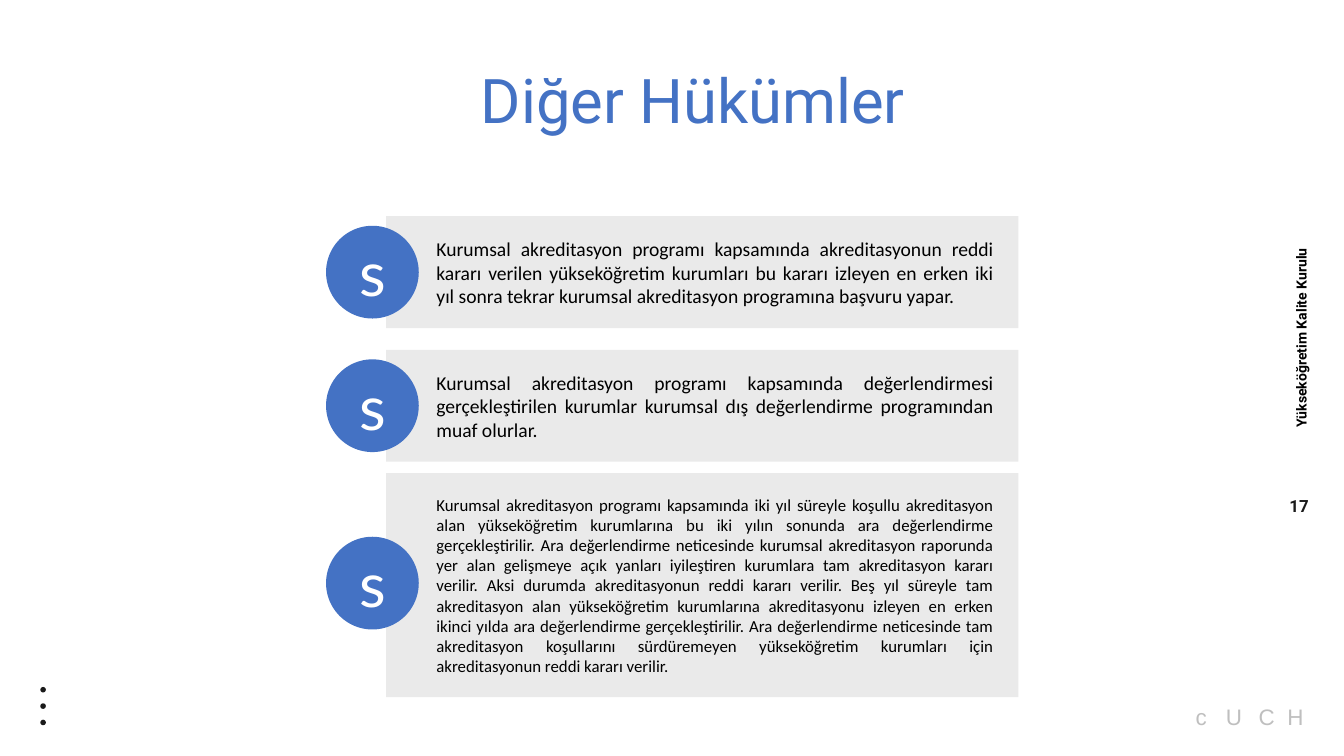
from dataclasses import dataclass

from lxml.etree import SubElement
from pptx import Presentation
from pptx.dml.color import RGBColor
from pptx.enum.shapes import MSO_SHAPE as Shape
from pptx.enum.text import MSO_ANCHOR as Anchor, PP_ALIGN as Align
from pptx.oxml.ns import qn
from pptx.util import Inches, Pt


@dataclass(frozen=True)
class Theme:
    """Colours, fonts and type sizes of the slide."""
    blue: str = "4472C4"
    ink: str = "1A1A1A"
    black: str = "000000"
    white: str = "FFFFFF"
    pale: str = "BFBFBF"
    heading: str = "Roboto"
    body: str = "Calibri"
    badge: str = "Lato"
    icon: str = "Arial"
    display_size: int = 88
    icon_size: int = 32
    body_size: int = 28
    small_size: int = 24
    label_size: int = 20
    panel_opacity: int = 9


def write_text(shape, text, *, size, font, color, bold=False, align=Align.LEFT,
               anchor=Anchor.MIDDLE, wrap=True, insets=(0.1, 0.05, 0.1, 0.05)):
    """Fill a shape with one formatted paragraph."""
    frame = shape.text_frame
    frame.word_wrap = wrap
    frame.vertical_anchor = anchor
    (frame.margin_left, frame.margin_top,
     frame.margin_right, frame.margin_bottom) = map(Inches, insets)
    paragraph = frame.paragraphs[0]
    paragraph.alignment = align
    run = paragraph.add_run()
    run.text = text
    run.font.size = Pt(size)
    run.font.name = font
    run.font.bold = bold
    run.font.color.rgb = RGBColor.from_string(color)


class SlideBuilder:
    """Draws the elements of one slide in one theme."""

    def __init__(self, slide, theme):
        """Keep the slide and its theme."""
        self.slide = slide
        self.theme = theme

    def text(self, box, text, rotation=0, **style):
        """Add a text box."""
        shape = self.slide.shapes.add_textbox(*map(Inches, box))
        shape.rotation = rotation
        write_text(shape, text, **style)

    def shape(self, kind, box, fill, opacity=100):
        """Add a preset shape with a plain fill and no line."""
        shape = self.slide.shapes.add_shape(kind, *map(Inches, box))
        shape.shadow.inherit = False
        shape.line.fill.background()
        shape.fill.solid()
        shape.fill.fore_color.rgb = RGBColor.from_string(fill)
        if opacity < 100:
            color = shape._element.spPr.find(".//" + qn("a:srgbClr"))
            SubElement(color, qn("a:alpha"), val=str(opacity * 1000))
        return shape

    def provision(self, top, height, badge_top, text, size):
        """Add a grey text panel with a round badge on its left edge."""
        theme = self.theme
        panel = self.shape(Shape.RECTANGLE, (7.66, top, 12.55, height),
                           theme.ink, theme.panel_opacity)
        write_text(panel, text, size=size, font=theme.body, color=theme.black,
                   align=Align.JUSTIFY, insets=(1, 0.4, 0.5, 0.4))
        badge = self.shape(Shape.OVAL, (6.47, badge_top, 1.84, 1.84), theme.blue)
        write_text(badge, "s", size=theme.display_size, font=theme.badge,
                   color=theme.white, align=Align.CENTER, insets=(0.1, 0, 0.1, 0))

    def side_furniture(self):
        """Add the side label, page number, dots and icon letters."""
        theme = self.theme
        self.text((23.9, 6.45, 3.83, 0.44), "Yükseköğretim Kalite Kurulu", rotation=270,
                  size=theme.label_size, font=theme.heading, color=theme.black,
                  bold=True, wrap=False)
        self.text((25.38, 9.71, 0.8, 0.64), "17", size=theme.small_size,
                  font=theme.heading, color=theme.ink, bold=True, align=Align.CENTER,
                  wrap=False, insets=(0.13, 0.07, 0.13, 0.07))
        for index in range(3):
            self.shape(Shape.OVAL, (0.8, 13.63 + index * 0.325, 0.11, 0.11), theme.ink)
        for letter, left in zip("cUCH", (23.51, 24.16, 24.81, 25.38)):
            self.text((left, 13.9, 0.65, 0.64), letter, size=theme.icon_size,
                      font=theme.icon, color=theme.pale, align=Align.CENTER, wrap=False)


def main():
    """Build and save the slide."""
    theme = Theme()
    presentation = Presentation()
    presentation.slide_width = Inches(26.67)
    presentation.slide_height = Inches(15)
    slide = presentation.slides.add_slide(presentation.slide_layouts[6])
    builder = SlideBuilder(slide, theme)
    builder.side_furniture()
    builder.text((3.9, 1.17, 19.7, 1.58), "Diğer Hükümler", size=theme.display_size,
                 font=theme.heading, color=theme.blue, align=Align.CENTER,
                 anchor=Anchor.TOP)
    provisions = (
        (4.29, 2.22, 4.48, theme.body_size,
         "Kurumsal akreditasyon programı kapsamında akreditasyonun reddi kararı verilen "
         "yükseköğretim kurumları bu kararı izleyen en erken iki yıl sonra tekrar "
         "kurumsal akreditasyon programına başvuru yapar."),
        (6.94, 2.22, 7.13, theme.body_size,
         "Kurumsal akreditasyon programı kapsamında değerlendirmesi gerçekleştirilen "
         "kurumlar kurumsal dış değerlendirme programından muaf olurlar."),
        (9.39, 4.44, 10.65, theme.small_size,
         "Kurumsal akreditasyon programı kapsamında iki yıl süreyle koşullu akreditasyon "
         "alan yükseköğretim kurumlarına bu iki yılın sonunda ara değerlendirme "
         "gerçekleştirilir. Ara değerlendirme neticesinde kurumsal akreditasyon raporunda "
         "yer alan gelişmeye açık yanları iyileştiren kurumlara tam akreditasyon kararı "
         "verilir. Aksi durumda akreditasyonun reddi kararı verilir. Beş yıl süreyle tam "
         "akreditasyon alan yükseköğretim kurumlarına akreditasyonu izleyen en erken "
         "ikinci yılda ara değerlendirme gerçekleştirilir. Ara değerlendirme neticesinde "
         "tam akreditasyon koşullarını sürdüremeyen yükseköğretim kurumları için "
         "akreditasyonun reddi kararı verilir."),
    )
    for top, height, badge_top, size, text in provisions:
        builder.provision(top, height, badge_top, text, size)
    presentation.save("out.pptx")


if __name__ == "__main__":
    main()
